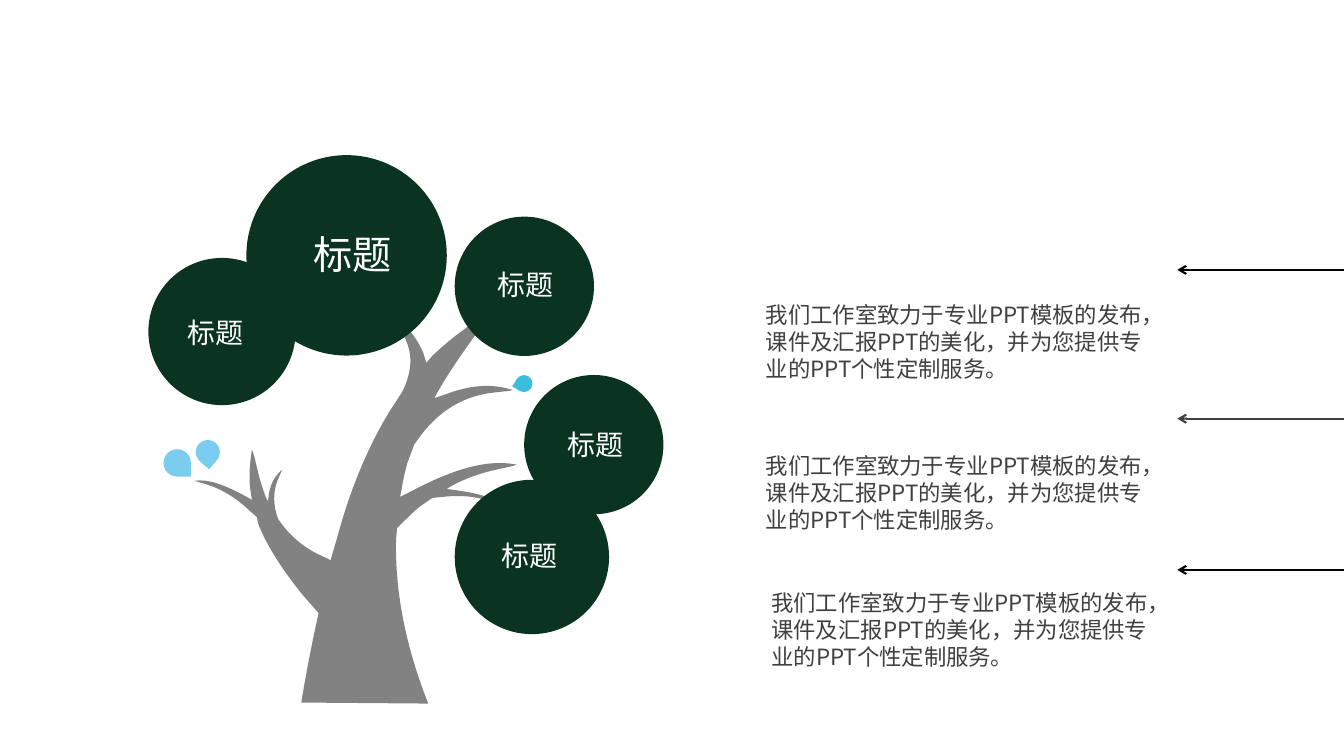
from lxml.etree import SubElement
from pptx import Presentation
from pptx.dml.color import RGBColor
from pptx.enum.shapes import MSO_CONNECTOR, MSO_SHAPE
from pptx.enum.text import MSO_ANCHOR
from pptx.oxml.ns import qn
from pptx.util import Cm, Pt

FONT = "Noto Sans CJK SC"
BLACK = RGBColor(0x00, 0x00, 0x00)
WHITE = RGBColor(0xFF, 0xFF, 0xFF)
CHARCOAL = RGBColor(0x40, 0x40, 0x40)
FOREST = RGBColor(0x0A, 0x34, 0x1F)
SKY = RGBColor(0x7A, 0xCD, 0xEF)
TURQUOISE = RGBColor(0x3C, 0xBD, 0xDC)

SLIDE_WIDTH, SLIDE_HEIGHT = 33.87, 19.05
HEADING = "标题"
BODY = "我们工作室致力于专业PPT模板的发布，课件及汇报PPT的美化，并为您提供专业的PPT个性定制服务。"

# Crown: left, top, diameter, label left, label top, label width, label height, text size
CROWNS = [
    (3.74, 6.50, 3.71, 4.47, 7.78, 2.26, 1.17, 20),
    (11.46, 5.46, 3.51, 12.28, 6.58, 2.26, 1.17, 20),
    (13.21, 9.45, 3.51, 14.05, 10.60, 2.26, 1.17, 20),
    (11.46, 12.09, 3.89, 12.40, 13.42, 2.26, 1.17, 20),
    (6.21, 3.91, 5.05, 7.64, 5.63, 2.82, 1.52, 28),
]
LEAVES = [
    (4.12, 11.32, 0.69, 90, SKY),
    (4.93, 11.09, 0.61, 130.4, SKY),
    (12.99, 9.45, 0.43, 211.7, TURQUOISE),
]
ARROWS = [(6.80, BLACK), (10.55, CHARCOAL), (14.36, BLACK)]
ARROW_TIP = 29.67
BODY_PLACES = [(18.97, 7.42), (18.97, 11.21), (19.11, 14.67)]
BODY_WIDTH, BODY_HEIGHT = 10.49, 2.79

# Tree: a pair is a straight line, six numbers are a cubic curve
TREE_UNIT = Cm(0.0254)
TREE_START = (486, 310)
TREE_SEGMENTS = [
    (476, 329, 453, 355, 432, 393), (431, 395), (440, 392),
    (466, 382, 487, 380, 509, 387), (495, 391, 453, 384, 416, 434),
    (411, 441), (404, 460), (402, 468, 400, 475, 399, 483),
    (397, 493), (403, 490), (448, 466, 482, 455, 513, 461),
    (502, 465, 480, 466, 452, 480), (443, 485), (450, 486),
    (473, 489, 488, 493, 497, 501), (489, 499, 472, 489, 439, 493),
    (429, 494), (416, 503), (410, 508, 404, 514, 397, 521),
    (394, 524), (393, 535), (392, 581, 400, 635, 425, 698),
    (299, 697), (304, 666, 310, 636, 316, 609), (316, 608),
    (301, 591), (280, 565, 265, 542, 256, 519), (255, 513),
    (248, 507), (222, 482, 201, 480, 193, 477),
    (207, 475, 223, 481, 245, 493), (250, 496), (248, 483),
    (247, 471, 248, 459, 250, 446), (254, 455, 256, 475, 265, 496),
    (266, 497), (267, 489), (269, 479, 273, 472, 280, 466),
    (278, 472, 267, 487, 275, 512), (276, 515), (282, 523),
    (292, 535, 305, 546, 325, 554), (328, 556), (335, 532),
    (348, 484, 365, 444, 386, 409), (399, 389),
    (422, 343, 390, 321, 384, 311), (401, 319, 412, 332, 420, 350),
    (423, 360), (429, 353), (446, 337, 464, 323, 486, 310),
]


def paint(shape, color):
    """Give a shape a plain fill without line or shadow."""
    shape.shadow.inherit = False
    shape.fill.solid()
    shape.fill.fore_color.rgb = color
    shape.line.fill.background()


def bend(line, segment, origin):
    """Turn a straight path step into a cubic curve."""
    line.tag = qn("a:cubicBezTo")
    line.remove(line[0])
    for x, y in zip(segment[::2], segment[1::2]):
        SubElement(line, qn("a:pt"), x=str(x - origin[0]), y=str(y - origin[1]))


def add_tree(page):
    """Draw the half-transparent trunk with its branches."""
    corners = [segment[-2:] for segment in TREE_SEGMENTS]
    builder = page.shapes.build_freeform(*TREE_START, scale=TREE_UNIT)
    builder.add_line_segments(corners, close=True)
    tree = builder.convert_to_shape()
    origin = tuple(map(min, zip(TREE_START, *corners)))
    lines = list(tree._element.iter(qn("a:lnTo")))
    for line, segment in zip(lines, TREE_SEGMENTS):
        if len(segment) == 6:
            bend(line, segment, origin)
    paint(tree, BLACK)
    color = next(tree._element.spPr.iter(qn("a:srgbClr")))
    SubElement(color, qn("a:alpha"), val="49000")


def add_round(page, kind, left, top, size, color):
    """Add a painted shape that is as wide as it is high."""
    shape = page.shapes.add_shape(kind, Cm(left), Cm(top), Cm(size), Cm(size))
    paint(shape, color)
    return shape


def add_text(page, text, left, top, width, height, size, color):
    """Add a wrapped one-paragraph text box and return it."""
    box = page.shapes.add_textbox(Cm(left), Cm(top), Cm(width), Cm(height))
    box.text_frame.word_wrap = True
    para = box.text_frame.paragraphs[0]
    para.text = text
    para.line_spacing = Pt(size * 1.2)
    para.font.size = Pt(size)
    para.font.name = FONT
    para.font.color.rgb = color
    SubElement(para._p.pPr.find(qn("a:defRPr")), qn("a:ea"), typeface=FONT)
    return box


def add_arrow(page, top, color):
    """Add an arrow from the right slide edge."""
    arrow = page.shapes.add_connector(
        MSO_CONNECTOR.STRAIGHT, Cm(SLIDE_WIDTH), Cm(top), Cm(ARROW_TIP), Cm(top))
    arrow.line.color.rgb = color
    arrow.line.width = Pt(1.5)
    SubElement(arrow.line._get_or_add_ln(), qn("a:tailEnd"), type="arrow")
    SubElement(arrow._element.spPr, qn("a:effectLst"))


def main():
    """Build the tree slide and save it."""
    deck = Presentation()
    deck.slide_width, deck.slide_height = Cm(SLIDE_WIDTH), Cm(SLIDE_HEIGHT)
    page = deck.slides.add_slide(deck.slide_layouts[6])
    add_tree(page)
    for left, top, size, angle, color in LEAVES:
        add_round(page, MSO_SHAPE.TEAR, left, top, size, color).rotation = angle
    for left, top, diameter, *label_place, size in CROWNS:
        add_round(page, MSO_SHAPE.OVAL, left, top, diameter, FOREST)
        label = add_text(page, HEADING, *label_place, size, WHITE)
        label.text_frame.vertical_anchor = MSO_ANCHOR.MIDDLE
    for top, color in ARROWS:
        add_arrow(page, top, color)
    for left, top in BODY_PLACES:
        frame = add_text(page, BODY, left, top, BODY_WIDTH, BODY_HEIGHT, 16, CHARCOAL).text_frame
        frame.margin_left = frame.margin_right = Cm(0.33)
        frame.margin_top = frame.margin_bottom = Cm(0.18)
        frame.paragraphs[0].space_before = Pt(3)
    deck.save("out.pptx")


if __name__ == "__main__":
    main()
